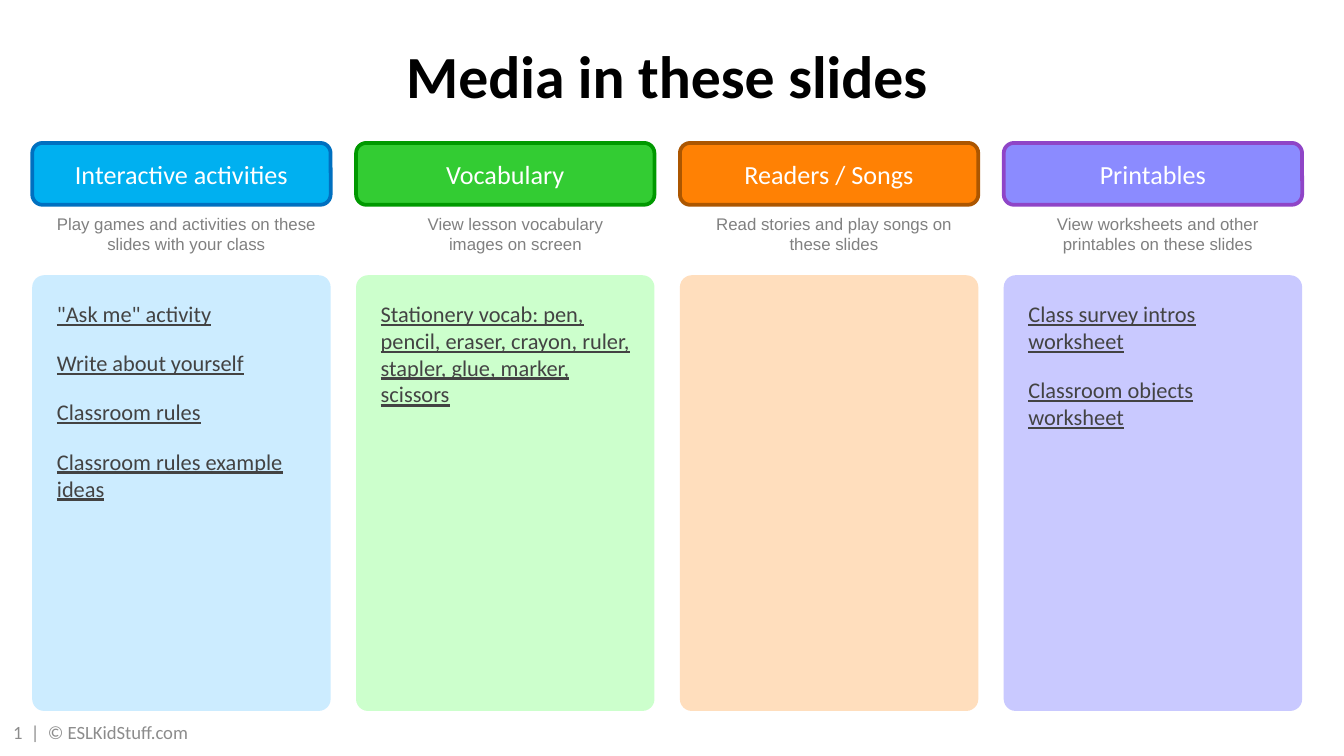
from dataclasses import dataclass

from pptx import Presentation
from pptx.dml.color import RGBColor
from pptx.enum.shapes import MSO_SHAPE as Preset
from pptx.enum.text import MSO_ANCHOR as Anchor, MSO_AUTO_SIZE as AutoSize, PP_ALIGN as Align
from pptx.util import Cm, Pt


@dataclass(frozen=True)
class Theme:
    heading_font: str = "Calibri"
    caption_font: str = "Arial"
    title_color: str = "000000"
    header_color: str = "FFFFFF"
    caption_color: str = "808080"
    item_color: str = "434343"
    footer_color: str = "8C8C8C"
    title_size: int = 32
    header_size: int = 14
    item_size: int = 12
    footer_size: int = 10
    caption_size: int = 9


@dataclass(frozen=True)
class Column:
    header: str
    caption: str
    items: tuple
    fill: str
    border: str
    panel: str
    caption_left: float = 0.12  # from the left edge of the column, in cm
    caption_width: float = 5.58


THEME = Theme()

COLUMN_LEFT, COLUMN_PITCH, COLUMN_WIDTH = 0.61, 6.12, 5.64
HEADER_TOP, HEADER_HEIGHT = 2.7, 1.17
CAPTION_TOP, CAPTION_HEIGHT = 3.91, 1.02
PANEL_TOP, PANEL_HEIGHT = 5.2, 8.23

COLUMNS = (
    Column("Interactive activities",
           "Play games and activities on these slides with your class",
           ('"Ask me" activity', "Write about yourself", "Classroom rules",
            "Classroom rules example ideas"),
           "00B0F0", "0070C0", "CCECFF"),
    Column("Vocabulary", "View lesson vocabulary images on screen",
           ("Stationery vocab: pen, pencil, eraser, crayon, ruler, "
            "stapler, glue, marker, scissors",),
           "33CC33", "009900", "CCFFCC", caption_left=0.84, caption_width=4.34),
    Column("Readers / Songs", "Read stories and play songs on these slides", (),
           "FF8104", "AC5600", "FFDEBD"),
    Column("Printables", "View worksheets and other printables on these slides",
           ("Class survey intros worksheet", "Classroom objects worksheet"),
           "8B8BFF", "8F45C7", "C9C9FF"),
)


def style(paragraph, font_name, size, color, align=Align.LEFT, bold=False, underline=False):
    paragraph.alignment = align
    font = paragraph.font
    font.name, font.size = font_name, Pt(size)
    font.bold, font.underline = bold, underline
    font.color.rgb = RGBColor.from_string(color)


def add_label(slide, text, left, top, width, height, *text_style, **options):
    """Add a one-paragraph text box, measured in cm, and return its frame."""
    frame = slide.shapes.add_textbox(Cm(left), Cm(top), Cm(width), Cm(height)).text_frame
    frame.word_wrap = True
    frame.text = text
    style(frame.paragraphs[0], *text_style, **options)
    return frame


def add_rounded_box(slide, left, top, height, fill, border=None):
    box = slide.shapes.add_shape(Preset.ROUNDED_RECTANGLE, Cm(left), Cm(top),
                                 Cm(COLUMN_WIDTH), Cm(height))
    box.shadow.inherit = False
    box.fill.solid()
    box.fill.fore_color.rgb = RGBColor.from_string(fill)
    if border:
        box.line.color.rgb = RGBColor.from_string(border)
        box.line.width = Pt(2)
    else:
        box.line.fill.background()
    return box


def add_header(slide, column, left):
    frame = add_rounded_box(slide, left, HEADER_TOP, HEADER_HEIGHT,
                            column.fill, column.border).text_frame
    frame.vertical_anchor = Anchor.MIDDLE
    frame.text = column.header
    style(frame.paragraphs[0], THEME.heading_font, THEME.header_size,
          THEME.header_color, Align.CENTER)


def add_caption(slide, column, left):
    frame = add_label(slide, column.caption, left + column.caption_left, CAPTION_TOP,
                      column.caption_width, CAPTION_HEIGHT, THEME.caption_font,
                      THEME.caption_size, THEME.caption_color, align=Align.CENTER)
    frame.auto_size = AutoSize.SHAPE_TO_FIT_TEXT


def add_item_panel(slide, column, left):
    panel = add_rounded_box(slide, left, PANEL_TOP, PANEL_HEIGHT, column.panel)
    panel.adjustments[0] = 0.04
    if not column.items:
        return
    frame = panel.text_frame
    frame.word_wrap = True
    frame.vertical_anchor = Anchor.TOP
    frame.margin_left = frame.margin_top = Cm(0.4)
    frame.text = "\n".join(column.items)
    for item in frame.paragraphs:
        item.space_after = Pt(12)
        style(item, THEME.heading_font, THEME.item_size, THEME.item_color, underline=True)


def main():
    deck = Presentation()
    deck.slide_width, deck.slide_height = Cm(25.4), Cm(14.28)
    slide = deck.slides.add_slide(deck.slide_layouts[6])

    add_label(slide, "Media in these slides", 0.86, 0.61, 23.5, 1.37, THEME.heading_font,
              THEME.title_size, THEME.title_color, align=Align.CENTER, bold=True)
    for index, column in enumerate(COLUMNS):
        left = COLUMN_LEFT + index * COLUMN_PITCH
        add_header(slide, column, left)
        add_caption(slide, column, left)
        add_item_panel(slide, column, left)
    footer = add_label(slide, "1  |  © ESLKidStuff.com", 0, 13.44, 5.51, 0.76,
                       THEME.heading_font, THEME.footer_size, THEME.footer_color)
    footer.vertical_anchor = Anchor.MIDDLE

    deck.save("out.pptx")


if __name__ == "__main__":
    main()
